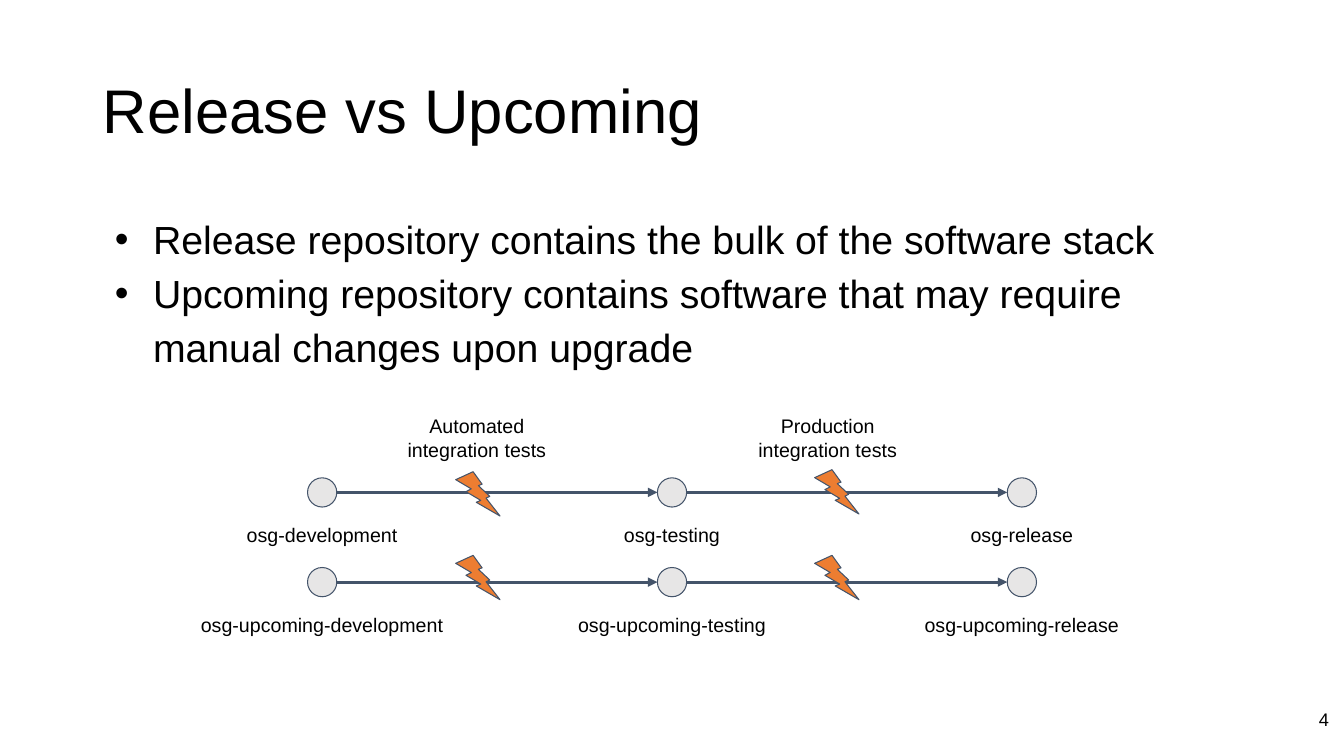
from dataclasses import dataclass

import pptx
import pptx.dml.color
import pptx.enum.shapes
import pptx.enum.text
import pptx.oxml.ns
import pptx.util
from lxml import etree

Inches = pptx.util.Inches
Pt = pptx.util.Pt
Shapes = pptx.enum.shapes.MSO_SHAPE
Align = pptx.enum.text.PP_ALIGN
Anchor = pptx.enum.text.MSO_ANCHOR
qn = pptx.oxml.ns.qn

FONT = "Arial"
BLACK, WHITE, GREY, SLATE, ORANGE = "000000", "FFFFFF", "E7E6E6", "44546A", "ED7D31"
NODE_SIZE = 0.29
BOLT_SIZE = 0.44
NODE_LEFTS = [3.05 + 3.47 * column for column in range(3)]
BOLT_LEFTS = [4.52, 8.08]


@dataclass
class Stage:
    label: str
    label_width: float


@dataclass
class Pipeline:
    top: float
    stages: list[Stage]
    bolt_tops: list[float]


@dataclass
class TestLabel:
    text: str
    left: float


BULLETS = [
    "Release repository contains the bulk of the software stack",
    "Upcoming repository contains software that may require manual changes upon upgrade",
]
PIPELINES = [
    Pipeline(4.74, [Stage("osg-development", 1.72), Stage("osg-testing", 1.72),
                    Stage("osg-release", 1.72)], [4.68, 4.66]),
    Pipeline(5.63, [Stage("osg-upcoming-development", 2.8), Stage("osg-upcoming-testing", 2.38),
                    Stage("osg-upcoming-release", 2.33)], [5.51, 5.51]),
]
TEST_LABELS = [
    TestLabel("Automated integration tests", 3.87),
    TestLabel("Production integration tests", 7.35),
]


def color(value: str):
    return pptx.dml.color.RGBColor.from_string(value)


def add_text(slide, left: float, top: float, width: float, height: float, text: str,
             size: float, align=Align.LEFT, anchor=Anchor.TOP, margin: float = 0.1,
             line_spacing: float = 1.0):
    shape = slide.shapes.add_textbox(Inches(left), Inches(top), Inches(width), Inches(height))
    frame = shape.text_frame
    frame.word_wrap = True
    frame.vertical_anchor = anchor
    frame.margin_left = frame.margin_right = Inches(0.1)
    frame.margin_top = frame.margin_bottom = Inches(margin)
    frame.text = text
    for paragraph in frame.paragraphs:
        paragraph.alignment = align
        paragraph.line_spacing = line_spacing
        for run in paragraph.runs:
            run.font.name = FONT
            run.font.size = Pt(size)
            run.font.color.rgb = color(BLACK)
    return shape


def add_bullet(paragraph) -> None:
    properties = paragraph._p.get_or_add_pPr()
    properties.set("marL", str(Inches(0.5)))
    properties.set("indent", str(Inches(-0.38)))
    bullet_color = etree.SubElement(properties, qn("a:buClr"))
    etree.SubElement(bullet_color, qn("a:srgbClr"), val=BLACK)
    etree.SubElement(properties, qn("a:buFont"), typeface=FONT)
    etree.SubElement(properties, qn("a:buChar"), char="•")


def add_figure(slide, kind, left: float, top: float, size: float, fill: str) -> None:
    shape = slide.shapes.add_shape(kind, Inches(left), Inches(top), Inches(size), Inches(size))
    shape.shadow.inherit = False
    shape.fill.solid()
    shape.fill.fore_color.rgb = color(fill)
    shape.line.color.rgb = color(SLATE)
    shape.line.width = Pt(0.75)


def add_arrow(slide, start: float, end: float, y: float) -> None:
    connector = slide.shapes.add_connector(
        pptx.enum.shapes.MSO_CONNECTOR.STRAIGHT, Inches(start), Inches(y), Inches(end), Inches(y))
    connector.line.color.rgb = color(SLATE)
    connector.line.width = Pt(2.25)
    etree.SubElement(connector.line._get_or_add_ln(), qn("a:tailEnd"), type="triangle")
    etree.SubElement(connector._element.spPr, qn("a:effectLst"))


def add_pipeline(slide, pipeline: Pipeline) -> None:
    for left, stage in zip(NODE_LEFTS, pipeline.stages):
        add_figure(slide, Shapes.OVAL, left, pipeline.top, NODE_SIZE, GREY)
        label_left = left + (NODE_SIZE - stage.label_width) / 2
        add_text(slide, label_left, pipeline.top + 0.35, stage.label_width, 0.44,
                 stage.label, 14, Align.CENTER)
    for start, end in zip(NODE_LEFTS, NODE_LEFTS[1:]):
        add_arrow(slide, start + NODE_SIZE, end, pipeline.top + NODE_SIZE / 2)
    for left, top in zip(BOLT_LEFTS, pipeline.bolt_tops):
        add_figure(slide, Shapes.LIGHTNING_BOLT, left, top, BOLT_SIZE, ORANGE)


def main() -> None:
    presentation = pptx.Presentation()
    presentation.slide_width = Inches(13.33)
    presentation.slide_height = Inches(7.5)
    slide = presentation.slides.add_slide(presentation.slide_layouts[6])

    # Title, bullets and slide number
    add_text(slide, 0.92, 0.4, 11.5, 1.45, "Release vs Upcoming", 44,
             anchor=Anchor.MIDDLE, margin=0.05, line_spacing=0.9)
    body = add_text(slide, 0.92, 2.02, 11.5, 1.99, "\n".join(BULLETS), 28,
                    margin=0.05, line_spacing=1.15)
    body.fill.solid()
    body.fill.fore_color.rgb = color(WHITE)
    for paragraph in body.text_frame.paragraphs:
        add_bullet(paragraph)
    add_text(slide, 12.48, 6.93, 0.8, 0.57, "4", 13, Align.RIGHT)

    # Release and upcoming pipelines
    for pipeline in PIPELINES:
        add_pipeline(slide, pipeline)

    # Test labels above the arrows
    for label in TEST_LABELS:
        add_text(slide, label.left, 4.01, 1.72, 0.67, label.text, 14, Align.CENTER)

    presentation.save("out.pptx")


if __name__ == "__main__":
    main()
